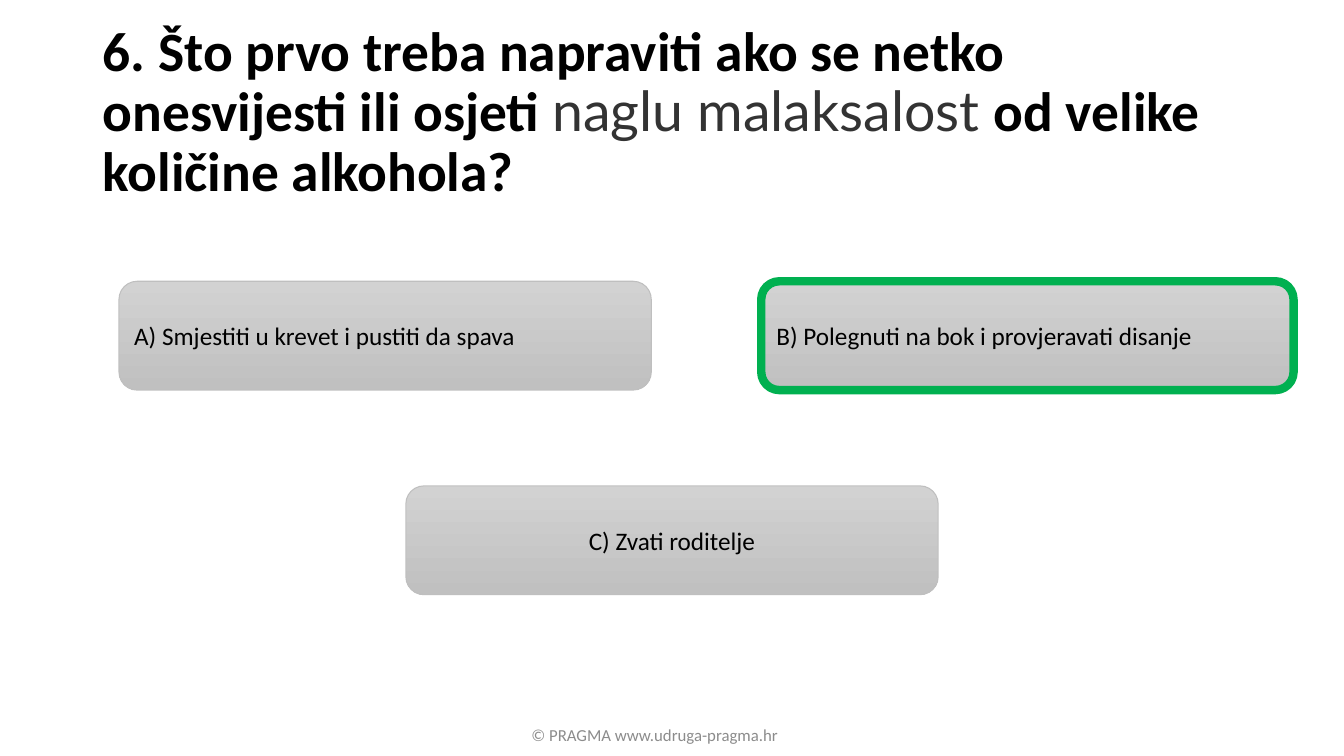
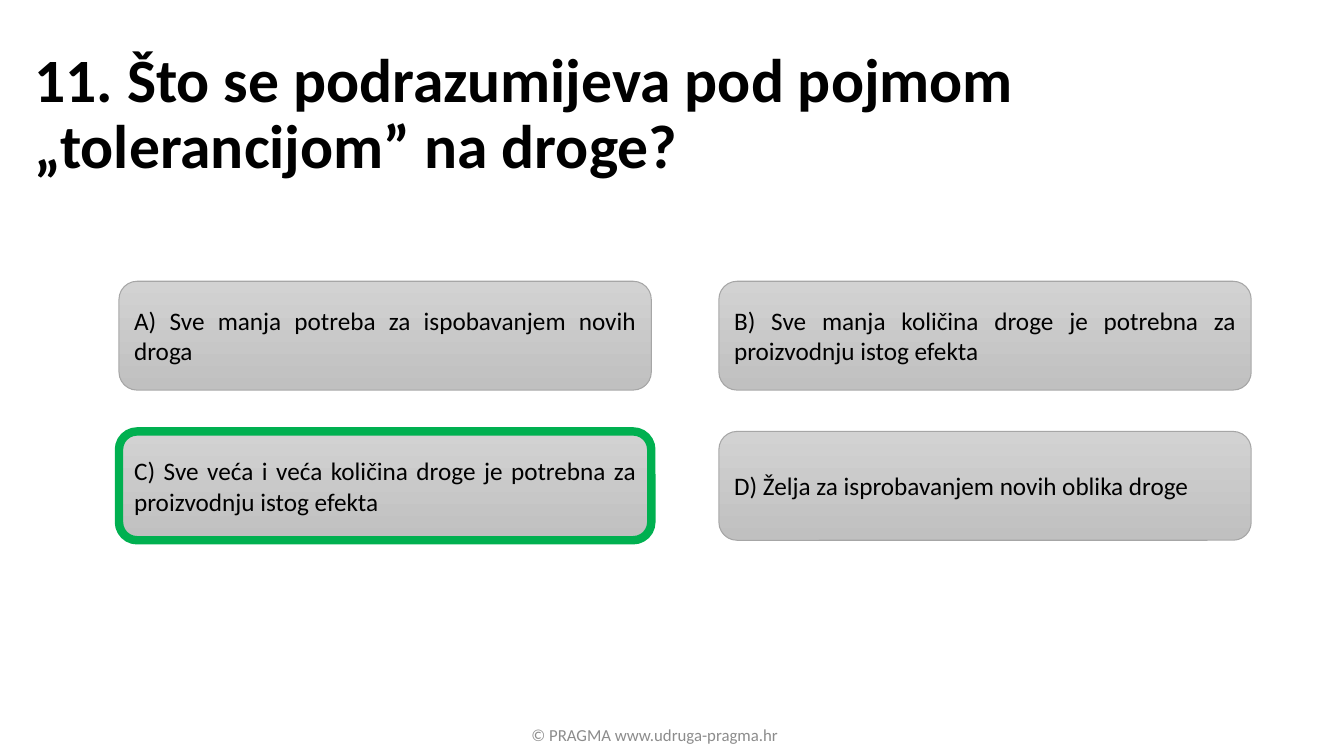
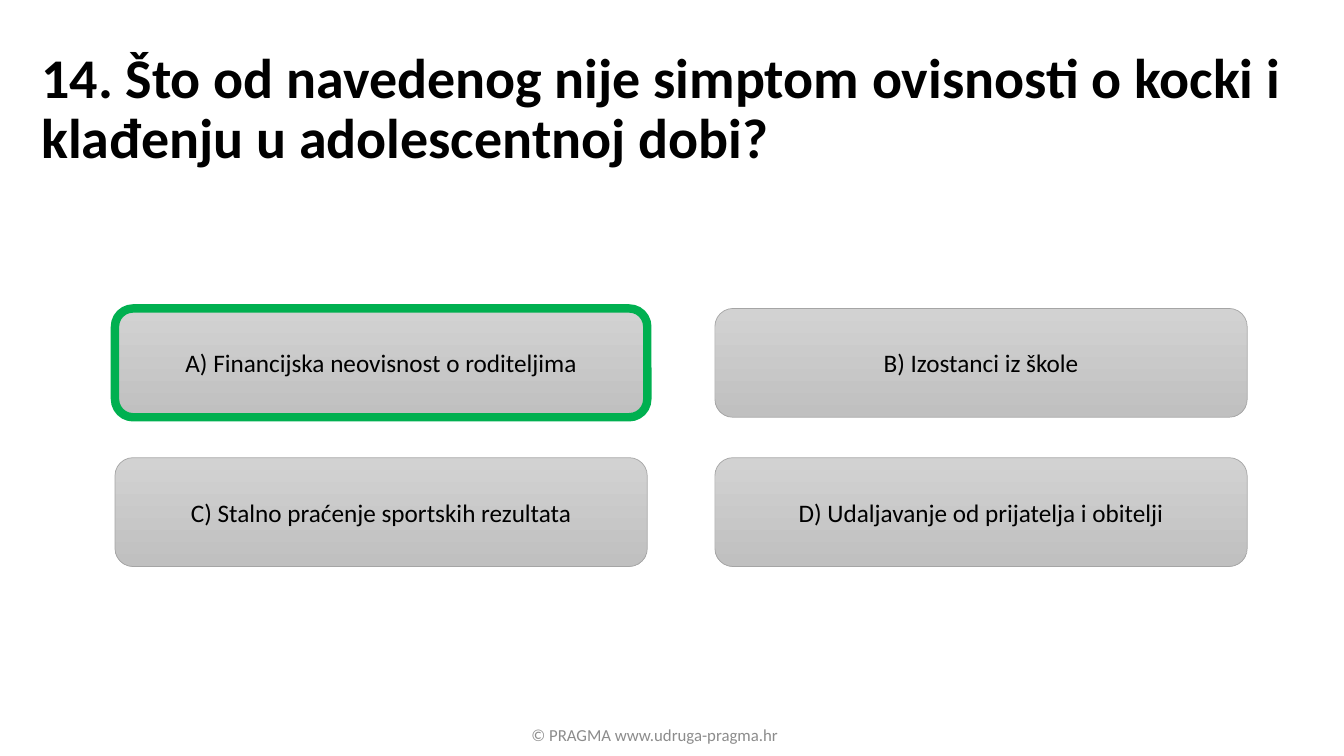
import pptx
import pptx.util
import pptx.dml.color
import pptx.enum.shapes
import pptx.enum.text

Inches = pptx.util.Inches
ALIGN = pptx.enum.text.PP_ALIGN
MIDDLE = pptx.enum.text.MSO_ANCHOR.MIDDLE
WIDE, TALL = 13.33, 7.5
CARD_W, CARD_H = 5.28, 1.08
FACE = "Calibri"
BLACK, DARK, MUTED, GREEN = "000000", "333333", "8C8C8C", "00B050"
SHADE = ("D2D2D2", "C0C0C0")


def tint(code):
    return pptx.dml.color.RGBColor.from_string(code)


def style(font, size, color=BLACK, face=FACE, bold=False):
    font.size = pptx.util.Pt(size)
    font.name = face
    font.bold = bold
    font.color.rgb = tint(color)


def place(box):
    return [Inches(part) for part in box]


def add_title(slide, box, parts, size):
    title = slide.shapes.title
    title.left, title.top, title.width, title.height = place(box)
    frame = title.text_frame
    frame.word_wrap = True
    frame.auto_size = pptx.enum.text.MSO_AUTO_SIZE.NONE
    frame.vertical_anchor = MIDDLE
    para = frame.paragraphs[0]
    para.alignment = ALIGN.LEFT
    para.line_spacing = 0.9
    for words, light in parts:
        run = para.add_run()
        run.text = words
        if light:
            style(run.font, size, DARK, "Lato")
        else:
            style(run.font, size, bold=True)


def add_card(slide, left, top, words, align, edge, weight):
    card = slide.shapes.add_shape(
        pptx.enum.shapes.MSO_SHAPE.ROUNDED_RECTANGLE,
        *place((left, top, CARD_W, CARD_H)))
    card.shadow.inherit = False
    card.fill.gradient()
    card.fill.gradient_angle = 270
    for stop, code in zip(card.fill.gradient_stops, SHADE):
        stop.color.rgb = tint(code)
    card.line.color.rgb = tint(edge)
    card.line.width = pptx.util.Pt(weight)
    frame = card.text_frame
    frame.word_wrap = True
    frame.vertical_anchor = MIDDLE
    para = frame.paragraphs[0]
    para.text = words
    para.alignment = align
    style(para.font, 18)


def add_grid(slide, left, top, step, items, right, align, edge, weight):
    for spot, words in enumerate(items):
        row, col = divmod(spot, 2)
        look = (GREEN, 6) if spot == right else (edge, weight)
        add_card(slide, left + col * step[0], top + row * step[1],
                 words, align, *look)


def add_footer(slide):
    box = slide.shapes.add_textbox(*place((4.91, 7.09, 3.17, 0.4)))
    frame = box.text_frame
    frame.word_wrap = True
    frame.vertical_anchor = MIDDLE
    para = frame.paragraphs[0]
    para.text = "© PRAGMA www.udruga-pragma.hr"
    para.alignment = ALIGN.CENTER
    style(para.font, 12, MUTED)


def add_quiz(deck, box, parts, size):
    slide = deck.slides.add_slide(deck.slide_layouts[5])
    add_title(slide, box, parts, size)
    add_footer(slide)
    return slide


def main():
    deck = pptx.Presentation()
    deck.slide_width, deck.slide_height = Inches(WIDE), Inches(TALL)

    faint = add_quiz(deck, (0.92, 0.4, 11.5, 1.45), [
        ("6. Što prvo treba napraviti ako se netko onesvijesti ili osjeti ", False),
        ("naglu malaksalost ", True),
        ("od velike količine alkohola?", False)], 39.6)
    add_grid(faint, 1.18, 2.79, (6.37, 0), [
        "A) Smjestiti u krevet i pustiti da spava",
        "B) Polegnuti na bok i provjeravati disanje"],
        1, ALIGN.LEFT, "BFBFBF", 0.75)
    add_card(faint, (WIDE - CARD_W) / 2, 4.82, "C) Zvati roditelje",
             ALIGN.CENTER, "BFBFBF", 0.75)

    drugs = add_quiz(deck, (0.24, 0.42, 13.09, 1.45), [
        ("11. Što se podrazumijeva pod pojmom „tolerancijom” na droge?", False)], 44)
    add_grid(drugs, 1.18, 2.79, (5.95, 1.49), [
        "A) Sve manja potreba za ispobavanjem novih droga",
        "B) Sve manja količina droge je potrebna za proizvodnju istog efekta",
        "C) Sve veća i veća količina droge je potrebna za proizvodnju istog efekta",
        "D) Želja za isprobavanjem novih oblika droge"],
        2, ALIGN.JUSTIFY, "A6A6A6", 0.75)

    bets = add_quiz(deck, (0.31, 0.37, 12.7, 1.45), [
        ("14. Što od navedenog nije simptom ovisnosti o kocki i klađenju "
         "u adolescentnoj dobi?", False)], 40)
    add_grid(bets, 1.14, 3.06, (5.95, 1.48), [
        "A) Financijska neovisnost o roditeljima",
        "B) Izostanci iz škole",
        "C) Stalno praćenje sportskih rezultata",
        "D) Udaljavanje od prijatelja i obitelji"],
        0, ALIGN.CENTER, "A5A5A5", 0.5)

    deck.save("out.pptx")


if __name__ == "__main__":
    main()
